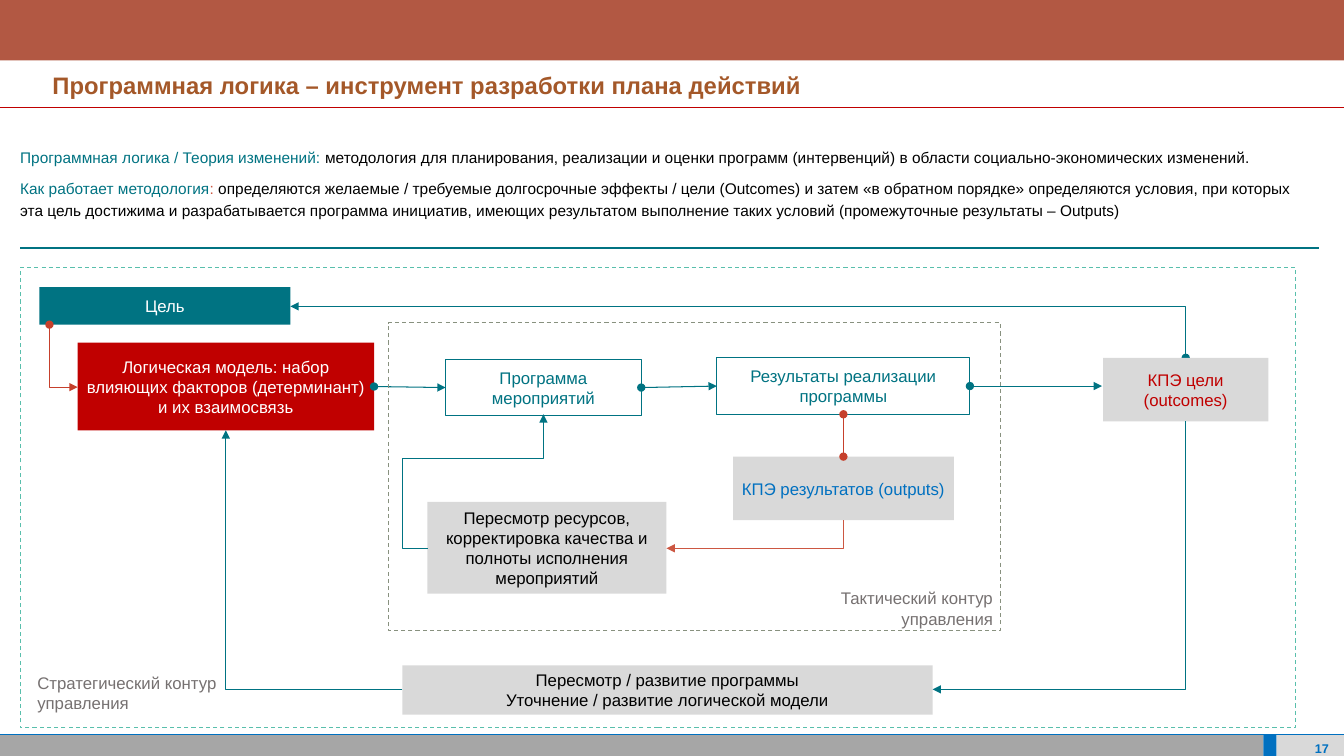
import dataclasses

import lxml.etree
import pptx
import pptx.dml.color
import pptx.enum.dml
import pptx.enum.shapes
import pptx.enum.text
import pptx.oxml.ns
import pptx.util

Inches = pptx.util.Inches
ALIGN = pptx.enum.text.PP_ALIGN
ANCHOR = pptx.enum.text.MSO_ANCHOR
CONNECTOR = pptx.enum.shapes.MSO_CONNECTOR
TOP, LEFT, BOTTOM, RIGHT = range(4)


@dataclasses.dataclass(frozen=True)
class Theme:
    """Colours, font and type sizes of the slide."""
    font: str = "Arial"
    teal: str = "007382"
    mint: str = "59BFAC"
    red: str = "C00000"
    rust: str = "C6402C"
    coral: str = "CC5742"
    brick: str = "B25843"
    brown: str = "A45829"
    blue: str = "0070C0"
    olive: str = "88917F"
    caption: str = "767171"
    silver: str = "A6A6A6"
    pale: str = "D9D9D9"
    white: str = "FFFFFF"
    black: str = "000000"
    title_size: float = 17
    label_size: float = 12
    body_size: float = 11
    number_size: float = 9
    thin: float = 0.5
    normal: float = 0.75
    thick: float = 1.5


THEME = Theme()


def rgb(colour):
    """Turn a hex string into a colour."""
    return pptx.dml.color.RGBColor.from_string(colour)


def apply(target, values):
    """Set every attribute named in a dict of format values."""
    for name, value in values.items():
        setattr(target, name, value)


def write(shape, paragraphs, size=THEME.label_size, bold=False, margins=(0.05,) * 4,
          anchor=ANCHOR.MIDDLE, **spacing):
    """Fill a shape with paragraphs, each a list of (text, colour) runs."""
    frame = shape.text_frame
    left, top, right, bottom = map(Inches, margins)
    apply(frame, {"word_wrap": True, "vertical_anchor": anchor, "margin_left": left,
                  "margin_top": top, "margin_right": right, "margin_bottom": bottom})
    for index, runs in enumerate(paragraphs):
        paragraph = frame.add_paragraph() if index else frame.paragraphs[0]
        apply(paragraph, spacing)
        for text, colour in runs:
            run = paragraph.add_run()
            run.text = text
            apply(run.font, {"name": THEME.font, "size": pptx.util.Pt(size), "bold": bold})
            run.font.color.rgb = rgb(colour)


def add_box(slide, bounds, fill=None, line=None, dashed=False):
    """Add a rectangle with an optional fill and outline."""
    shape = slide.shapes.add_shape(pptx.enum.shapes.MSO_SHAPE.RECTANGLE, *map(Inches, bounds))
    shape.shadow.inherit = False
    if fill:
        shape.fill.solid()
        shape.fill.fore_color.rgb = rgb(fill)
    else:
        shape.fill.background()
    if line:
        shape.line.color.rgb = rgb(line)
        shape.line.width = pptx.util.Pt(THEME.normal)
    else:
        shape.line.fill.background()
    if dashed:
        shape.line.dash_style = pptx.enum.dml.MSO_LINE.DASH
    return shape


def add_step(slide, bounds, lines, colour, fill=None, line=None):
    """Add a rectangle with a centred label."""
    shape = add_box(slide, bounds, fill, line)
    write(shape, [[(text, colour)] for text in lines], alignment=ALIGN.CENTER)
    return shape


def add_text(slide, bounds, paragraphs, **options):
    """Add a text box."""
    write(slide.shapes.add_textbox(*map(Inches, bounds)), paragraphs, **options)


def add_line(slide, start, end, colour, width=THEME.normal, head=None, tail=None,
             kind=CONNECTOR.STRAIGHT):
    """Add a connector with optional line ends."""
    connector = slide.shapes.add_connector(kind, *map(Inches, (*start, *end)))
    connector.line.color.rgb = rgb(colour)
    connector.line.width = pptx.util.Pt(width)
    outline = connector.line._get_or_add_ln()
    for tag, end_type in (("a:headEnd", head), ("a:tailEnd", tail)):
        if end_type:
            lxml.etree.SubElement(outline, pptx.oxml.ns.qn(tag), type=end_type)
    lxml.etree.SubElement(connector._element.spPr, pptx.oxml.ns.qn("a:effectLst"))
    return connector


def add_elbow(slide, start, end, colour, vertical_first=False, bends=(), **ends):
    """Add an elbow with one corner, or with three corners placed by two bends."""
    connector = add_line(slide, start, end, colour, kind=CONNECTOR.ELBOW, **ends)
    properties = connector._element.spPr
    geometry = properties.find(pptx.oxml.ns.qn("a:prstGeom"))
    geometry.set("prst", "bentConnector4" if bends else "bentConnector2")
    guides = geometry.find(pptx.oxml.ns.qn("a:avLst"))
    for number, bend in enumerate(bends, 1):
        lxml.etree.SubElement(guides, pptx.oxml.ns.qn("a:gd"), name=f"adj{number}",
                              fmla=f"val {round(bend * 100000)}")
    if vertical_first:
        across, down = end[0] - start[0], end[1] - start[1]
        width, height = abs(down), abs(across)
        apply(connector, {"left": Inches((start[0] + end[0] - width) / 2),
                          "top": Inches((start[1] + end[1] - height) / 2),
                          "width": Inches(width), "height": Inches(height)})
        transform = properties.find(pptx.oxml.ns.qn("a:xfrm"))
        transform.set("rot", str((90 if down > 0 else 270) * 60000))
        transform.set("flipH", "0")
        transform.set("flipV", "1" if (across > 0) == (down > 0) else "0")


def add_frame(slide):
    """Draw the header, the footer and the slide number."""
    for bounds, fill in (((0, 7.29, 12.53, 0.21), THEME.silver),
                         ((12.66, 7.29, 0.67, 0.21), THEME.pale),
                         ((12.53, 7.29, 0.13, 0.21), THEME.blue),
                         ((0, 0, 13.33, 0.6), THEME.brick)):
        add_box(slide, bounds, fill)
    for height, colour in ((7.29, THEME.blue), (1.07, THEME.red)):
        add_line(slide, (0, height), (13.33, height), colour, THEME.thin)
    add_text(slide, (12.76, 7.32, 0.58, 0.16), [[("17", THEME.blue)]], size=THEME.number_size,
             bold=True, margins=(0.12, 0, 0.16, 0), anchor=ANCHOR.TOP,
             alignment=ALIGN.RIGHT, line_spacing=1.2)
    add_text(slide, (0.28, 0.6, 13.05, 0.47),
             [[("Программная логика – инструмент разработки плана действий", THEME.brown)]],
             size=THEME.title_size, bold=True, margins=(0.24, 0.04, 0.16, 0.08),
             anchor=ANCHOR.TOP, alignment=ALIGN.JUSTIFY, line_spacing=1.2)


def add_introduction(slide):
    """Write the two explanatory paragraphs and the rule below them."""
    add_text(slide, (0.15, 1.25, 12.94, 1.11), [
        [("Программная логика / Теория изменений: ", THEME.teal),
         ("методология для планирования, реализации и оценки программ (интервенций) "
          "в области социально-экономических изменений.", THEME.black)],
        [("Как работает методология", THEME.teal), (": ", THEME.coral),
         ("определяются желаемые / требуемые долгосрочные эффекты / цели (Outcomes) и затем "
          "«в обратном порядке» определяются условия, при которых эта цель достижима и "
          "разрабатывается программа инициатив, имеющих результатом выполнение таких условий "
          "(промежуточные результаты – Outputs)", THEME.black)],
    ], size=THEME.body_size, line_spacing=1.2, space_after=pptx.util.Pt(6))
    add_line(slide, (0.2, 2.46), (13.08, 2.46), THEME.teal, THEME.thick)


def add_diagram(slide):
    """Draw the steps, their links and the two control loops."""
    add_step(slide, (0.39, 2.85, 2.49, 0.37), ["Цель"], THEME.white, THEME.teal)
    model = add_step(slide, (0.77, 3.4, 2.94, 0.87),
                     ["Логическая модель: набор влияющих факторов (детерминант) "
                      "и их взаимосвязь"], THEME.white, THEME.red)
    programme = add_step(slide, (4.42, 3.57, 1.94, 0.55), ["Программа мероприятий"],
                         THEME.teal, line=THEME.teal)
    results = add_step(slide, (7.11, 3.55, 2.51, 0.56), ["Результаты реализации программы"],
                       THEME.teal, line=THEME.teal)
    outputs = add_step(slide, (7.27, 4.53, 2.19, 0.63), ["КПЭ результатов (outputs)"],
                       THEME.blue, THEME.pale)
    marks = {"head": "oval", "tail": "triangle"}
    add_elbow(slide, (11.76, 3.55), (2.88, 3.04), THEME.teal, vertical_first=True, **marks)
    add_step(slide, (10.94, 3.55, 1.64, 0.63), ["КПЭ цели (outcomes)"], THEME.red, THEME.pale)
    add_step(slide, (4.24, 4.98, 2.37, 0.91),
             ["Пересмотр ресурсов, корректировка качества и полноты исполнения мероприятий"],
             THEME.black, THEME.pale)
    add_step(slide, (3.99, 6.6, 5.26, 0.49),
             ["Пересмотр / развитие программы", "Уточнение / развитие логической модели"],
             THEME.black, THEME.pale)

    for source, target in ((model, programme), (programme, results)):
        link = add_line(slide, (0, 0), (1, 1), THEME.teal, **marks)
        link.begin_connect(source, RIGHT)
        link.end_connect(target, LEFT)
    link = add_line(slide, (9.62, 3.83), (10.93, 3.83), THEME.teal, **marks)
    link.begin_connect(results, RIGHT)
    link = add_line(slide, (8.37, 4.11), (8.37, 4.53), THEME.rust, head="oval", tail="oval")
    link.begin_connect(results, BOTTOM)
    link.end_connect(outputs, TOP)

    add_elbow(slide, (0.49, 3.22), (0.77, 3.84), THEME.rust, vertical_first=True, **marks)
    for start, end, colour, vertical_first, bends in (
            ((8.37, 5.16), (6.61, 5.44), THEME.coral, True, ()),
            ((4.24, 5.44), (5.39, 4.11), THEME.teal, False, (-0.22, 0.67)),
            ((11.76, 4.18), (9.25, 6.84), THEME.teal, True, ()),
            ((3.99, 6.84), (2.24, 4.27), THEME.teal, False, ())):
        add_elbow(slide, start, end, colour, vertical_first, bends, tail="triangle")

    for loop, colour, label, text, alignment in (
            ((3.85, 3.2, 6.07, 3.06), THEME.olive, (7.53, 5.79, 2.37, 0.49),
             "Тактический контур управления", ALIGN.RIGHT),
            ((0.2, 2.65, 12.65, 4.57), THEME.mint, (0.32, 6.63, 2.37, 0.49),
             "Стратегический контур управления", ALIGN.LEFT)):
        add_box(slide, loop, line=colour, dashed=True)
        add_text(slide, label, [[(text, THEME.caption)]], alignment=alignment)


def main():
    """Build the slide and save it."""
    presentation = pptx.Presentation()
    apply(presentation, {"slide_width": Inches(13.33), "slide_height": Inches(7.5)})
    slide = presentation.slides.add_slide(presentation.slide_layouts[6])
    add_frame(slide)
    add_introduction(slide)
    add_diagram(slide)
    presentation.save("out.pptx")


if __name__ == "__main__":
    main()
